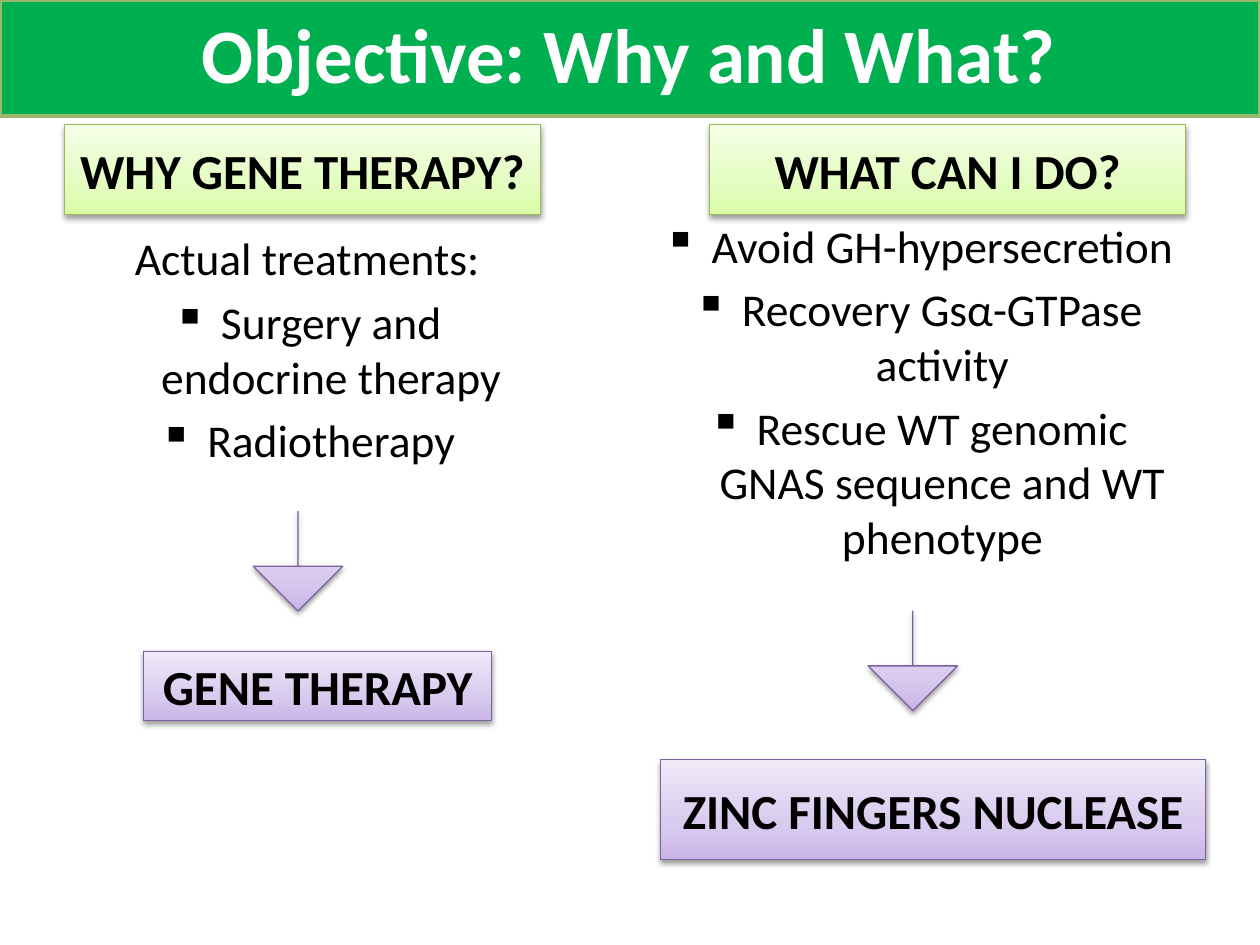
from copy import deepcopy
from dataclasses import dataclass

from lxml import etree
from pptx import Presentation
from pptx.dml.color import RGBColor
from pptx.enum.shapes import MSO_SHAPE
from pptx.enum.text import MSO_ANCHOR, PP_ALIGN
from pptx.oxml.ns import qn
from pptx.util import Inches, Pt

RECT, DOWN_ARROW = MSO_SHAPE.RECTANGLE, MSO_SHAPE.DOWN_ARROW
CENTER, MIDDLE = PP_ALIGN.CENTER, MSO_ANCHOR.MIDDLE
WIDTH, HEIGHT = Inches(10), Inches(7.5)


@dataclass(frozen=True)
class Theme:
    font: str = "Calibri"
    title_size: int = 44
    box_size: int = 28
    body_size: int = 26
    text: str = "000000"
    title: str = "FFFFFF"
    bar: str = "00B050"
    bar_line: str = "9CB86E"
    green: tuple = ("DAFDA7", "E4FCC2", "F5FFE7")
    green_line: str = "98B955"
    purple: tuple = ("C9B5E8", "D8CBEE", "F0EAF9")
    purple_line: str = "7D60A0"
    stops: tuple = (0, 0.35, 1)


THEME = Theme()
GREEN = (THEME.green, THEME.green_line)
PURPLE = (THEME.purple, THEME.purple_line)


def place(x, y, w, h):
    return [round(side * share / 100)
            for side, share in zip((WIDTH, HEIGHT) * 2, (x, y, w, h))]


def add_run(p, text, size, color=THEME.text, bold=False):
    r = p.add_run()
    r.text = text
    r.font.name = THEME.font
    r.font.size = Pt(size)
    r.font.bold = bold
    r.font.color.rgb = RGBColor.from_string(color)


def set_line(sp, color, width):
    sp.line.color.rgb = RGBColor.from_string(color)
    sp.line.width = Pt(width)


def set_gradient(sp, colors):
    sp.fill.gradient()
    sp.fill.gradient_angle = 90
    stop_list = sp.element.spPr.find(".//" + qn("a:gsLst"))
    stop_list.append(deepcopy(stop_list[-1]))
    for stop, color, pos in zip(sp.fill.gradient_stops, colors, THEME.stops):
        stop.color.rgb = RGBColor.from_string(color)
        stop.position = pos


def add_shadow(sp):
    sp.shadow.inherit = False
    effects = sp.element.spPr.find(qn("a:effectLst"))
    shadow = etree.SubElement(effects, qn("a:outerShdw"), blurRad="40000",
                              dist="20000", dir="5400000", rotWithShape="0")
    color = etree.SubElement(shadow, qn("a:srgbClr"), val="000000")
    etree.SubElement(color, qn("a:alpha"), val="38000")


def add_glossy(s, kind, frame, style):
    colors, line = style
    sp = s.shapes.add_shape(kind, *place(*frame))
    set_gradient(sp, colors)
    set_line(sp, line, 0.75)
    add_shadow(sp)
    return sp


def add_box(s, text, frame, style):
    tf = add_glossy(s, RECT, frame, style).text_frame
    tf.word_wrap = True
    tf.vertical_anchor = MIDDLE
    p = tf.paragraphs[0]
    p.alignment = CENTER
    add_run(p, text, THEME.box_size, bold=True)


def add_arrow(s, x, y):
    sp = add_glossy(s, DOWN_ARROW, (x, y, 7.1, 10.53), PURPLE)
    sp.adjustments[0] = 0
    sp.adjustments[1] = 0.5


def add_title(s, text):
    bar = s.shapes.add_shape(RECT, *place(0, 0, 100, 12.27))
    bar.fill.solid()
    bar.fill.fore_color.rgb = RGBColor.from_string(THEME.bar)
    set_line(bar, THEME.bar_line, 2)
    bar.shadow.inherit = False
    tf = s.shapes.add_textbox(*place(9.8, 0, 80.3, 11.2)).text_frame
    tf.word_wrap = True
    p = tf.paragraphs[0]
    p.alignment = CENTER
    add_run(p, text, THEME.title_size, THEME.title, True)


def add_list(s, frame, items, lead=None):
    tf = s.shapes.add_textbox(*place(*frame)).text_frame
    tf.word_wrap = True
    lines = ([lead] if lead else []) + items
    for i, text in enumerate(lines):
        p = tf.add_paragraph() if i else tf.paragraphs[0]
        p.alignment = CENTER
        p.space_before = Pt(THEME.body_size * 0.2)
        pPr = p._p.get_or_add_pPr()
        pPr.set("marL", str(Inches(0.38)))
        pPr.set("indent", str(-Inches(0.38)))
        if text != lead:
            etree.SubElement(pPr, qn("a:buChar"), char="▪")
        add_run(p, text, THEME.body_size)


def main():
    prs = Presentation()
    prs.slide_width, prs.slide_height = WIDTH, HEIGHT
    s = prs.slides.add_slide(prs.slide_layouts[6])

    add_title(s, "Objective: Why and What?")
    for text, x in (("WHY GENE THERAPY?", 5.1), ("WHAT CAN I DO?", 56.3)):
        add_box(s, text, (x, 13.2, 37.8, 9.47), GREEN)

    add_list(s, (5.1, 23.73, 38.6, 30),
             ["Surgery and endocrine therapy", "Radiotherapy"],
             lead="Actual treatments:")
    add_list(s, (50.8, 22.4, 44.2, 39),
             ["Avoid GH-hypersecretion",
              "Recovery Gsα-GTPase activity",
              "Rescue WT genomic GNAS sequence and WT phenotype"])

    add_arrow(s, 20.1, 54.13)
    add_arrow(s, 68.9, 64.67)
    add_box(s, "GENE THERAPY", (11.4, 68.93, 27.6, 7.33), PURPLE)
    add_box(s, "ZINC FINGERS NUCLEASE", (52.4, 80.4, 43.3, 10.53), PURPLE)
    prs.save("out.pptx")


if __name__ == "__main__":
    main()
